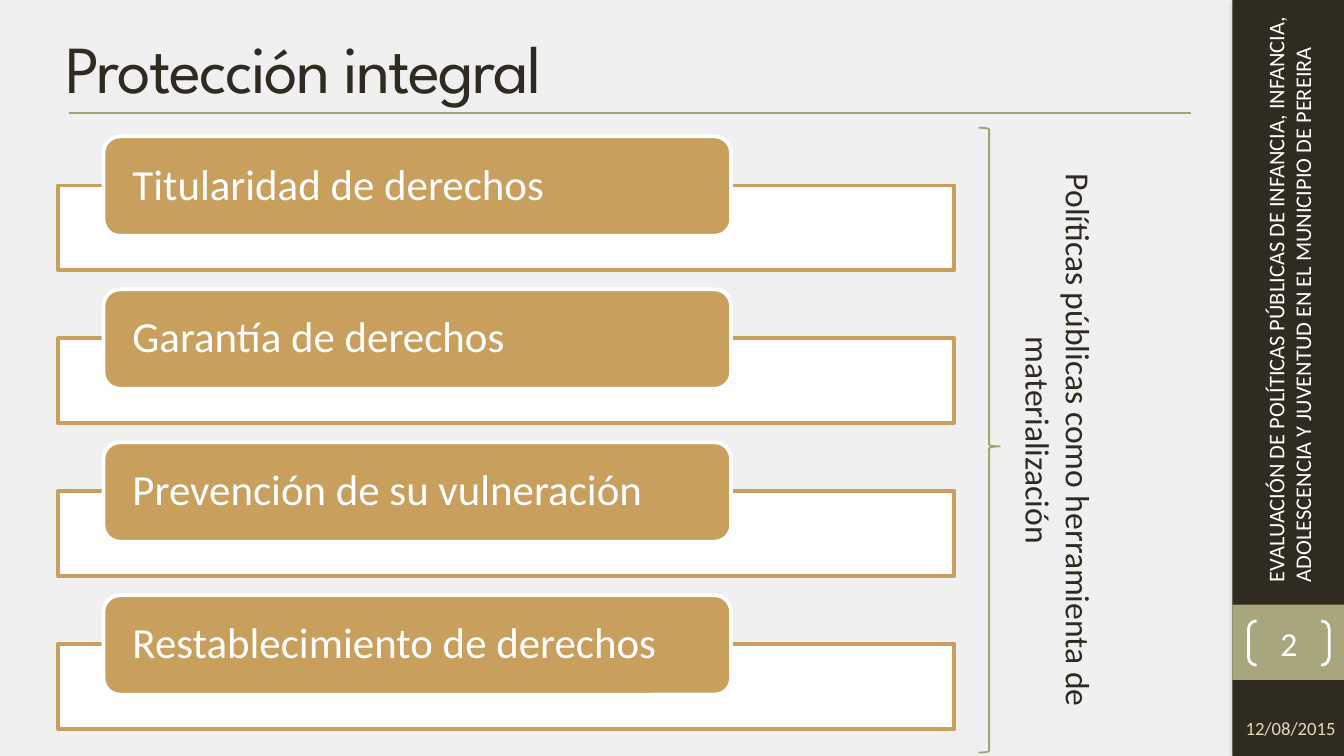
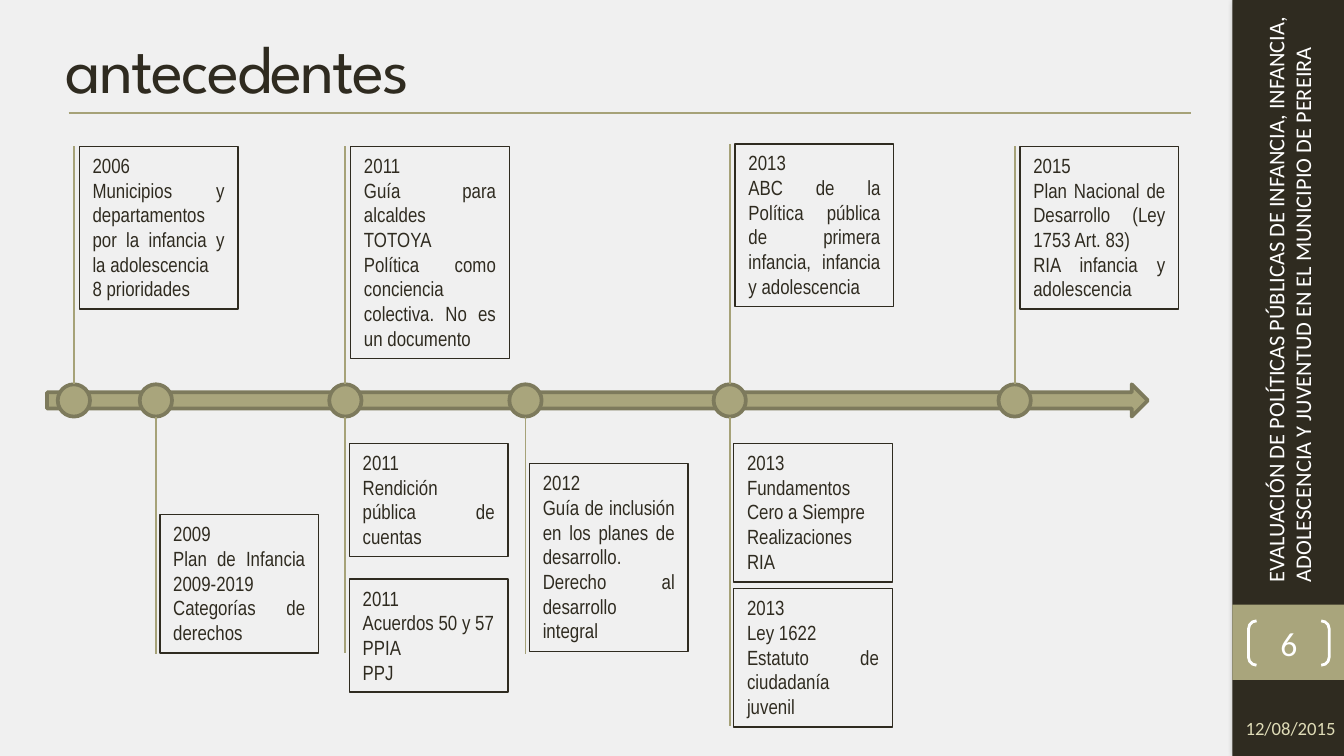
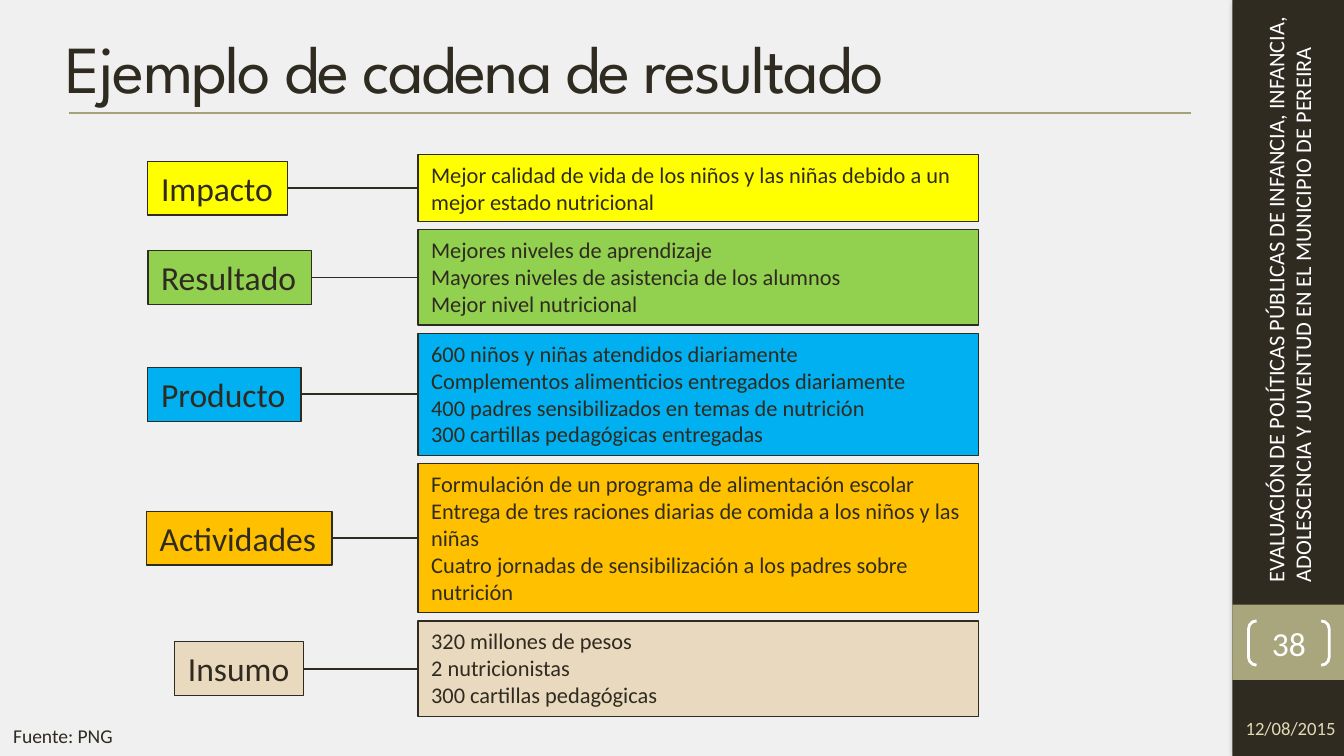
from lxml import etree
from pptx import Presentation
from pptx import util as u
from pptx.dml import color
from pptx.enum import shapes as s, text as t
from pptx.oxml import ns

WIDTH, HEIGHT = u.Inches(10), u.Inches(5.625)
COLUMNS = 100
CELL = WIDTH / COLUMNS

COLORS = {
    "background": "F0F0F0", "ink": "2F2B20", "sage": "A9A57C",
    "rule": "A6A278", "olive": "7D7A5C", "date": "DFDCB7",
    "white": "FFFFFF", "black": "000000", "ochre": "C89F5D",
    "yellow": "FFFF00", "green": "92D050", "blue": "00B0F0",
    "amber": "FFC000", "sand": "E9D9BE",
}
BODY, HEADING, NARROW = "Calibri", "League Spartan", "Arial Narrow"
PRESET = s.MSO_SHAPE
LEFT, CENTER, JUSTIFY = t.PP_ALIGN.LEFT, t.PP_ALIGN.CENTER, t.PP_ALIGN.JUSTIFY
TOP, MIDDLE = t.MSO_ANCHOR.TOP, t.MSO_ANCHOR.MIDDLE

BAND_TEXT = ("EVALUACIÓN DE POLÍTICAS PÚBLICAS DE INFANCIA, INFANCIA, "
             "ADOLESCENCIA Y JUVENTUD EN EL MUNICIPIO DE PEREIRA")
DATE = "12/08/2015"

RIGHTS = ["Titularidad de derechos", "Garantía de derechos",
          "Prevención de su vulneración", "Restablecimiento de derechos"]

MILESTONES = [
    (5.5, [(10.9, 12.1, ["2006", "Municipios y departamentos por la infancia y la adolescencia",
                         "8 prioridades"])], [], 0),
    (11.6, [], [(38.3, 10.3, ["2009", "Plan de Infancia 2009-2019",
                              "Categorías de derechos"])], 48.7),
    (25.7, [(10.9, 15.8, ["2011", "Guía para alcaldes", "TOTOYA",
                          "Política como conciencia colectiva. No es un documento"])],
     [(33, 8.4, ["2011", "Rendición pública de cuentas"]),
      (43.1, 8.4, ["2011", "Acuerdos 50 y 57", "PPIA", "PPJ"])], 48.6),
    (39.1, [], [(34.5, 14, ["2012", "Guía de inclusión en los planes de desarrollo.",
                            "Derecho al desarrollo integral"])], 48.7),
    (54.3, [(10.7, 12.1, ["2013", "ABC de la Política pública de primera infancia, "
                          "infancia y adolescencia"])],
     [(33, 10.3, ["2013", "Fundamentos Cero a Siempre", "Realizaciones", "RIA"]),
      (43.8, 10.3, ["2013", "Ley 1622", "Estatuto de ciudadanía juvenil"])], 54),
    (75.5, [(10.9, 12.1, ["2015", "Plan Nacional de Desarrollo (Ley 1753 Art. 83)",
                          "RIA infancia y adolescencia"])], [], 0),
]

CHAIN = [
    ("Impacto", 11, 10.4, "yellow", 5,
     ["Mejor calidad de vida de los niños y las niñas debido a un mejor estado nutricional"]),
    ("Resultado", 11, 12.2, "green", 7.1,
     ["Mejores niveles de aprendizaje", "Mayores niveles de asistencia de los alumnos",
      "Mejor nivel nutricional"]),
    ("Producto", 11, 11.4, "blue", 9.1,
     ["600 niños y niñas atendidos diariamente",
      "Complementos alimenticios entregados diariamente",
      "400 padres sensibilizados en temas de nutrición",
      "300 cartillas pedagógicas entregadas"]),
    ("Actividades", 10.9, 13.8, "amber", 11.1,
     ["Formulación de un programa de alimentación escolar",
      "Entrega de tres raciones diarias de comida a los niños y las niñas",
      "Cuatro jornadas de sensibilización a los padres sobre nutrición"]),
    ("Insumo", 13, 9.6, "sand", 7.1,
     ["320 millones de pesos", "2 nutricionistas", "300 cartillas pedagógicas"]),
]


def cells(*counts):
    return [u.Emu(round(count * CELL)) for count in counts]


def rgb(name):
    return color.RGBColor.from_string(COLORS[name])


def set_alpha(parent, percent):
    alpha = etree.SubElement(parent, ns.qn("a:alpha"))
    alpha.set("val", str(percent * 1000))


def add_box(slide, box, preset=PRESET.RECTANGLE, fill=None, line=None, weight=1, adjust=()):
    shape = slide.shapes.add_shape(preset, *cells(*box))
    shape.shadow.inherit = False
    if fill:
        shape.fill.solid()
        shape.fill.fore_color.rgb = rgb(fill)
    else:
        shape.fill.background()
    if line:
        shape.line.color.rgb = rgb(line)
        shape.line.width = u.Pt(weight)
    else:
        shape.line.fill.background()
    for index, value in enumerate(adjust):
        shape.adjustments[index] = value
    return shape


def write(shape, lines, size, font=BODY, ink="ink", align=LEFT, anchor=TOP,
          wrap=True, grow=False, insets=None, tracking=0, spacing=None):
    frame = shape.text_frame
    frame.word_wrap = wrap
    frame.vertical_anchor = anchor
    frame.auto_size = t.MSO_AUTO_SIZE.SHAPE_TO_FIT_TEXT if grow else t.MSO_AUTO_SIZE.NONE
    if insets:
        (frame.margin_left, frame.margin_top,
         frame.margin_right, frame.margin_bottom) = cells(*insets)
    for index, line in enumerate(lines):
        paragraph = frame.add_paragraph() if index else frame.paragraphs[0]
        paragraph.alignment = align
        if spacing:
            paragraph.line_spacing = spacing
        run = paragraph.add_run()
        run.text = line
        run.font.name = font
        run.font.size = u.Pt(size)
        run.font.color.rgb = rgb(ink)
        if tracking:
            run.font._element.set("spc", str(tracking * 100))
    return shape


def add_text(slide, box, line, size, **style):
    return write(slide.shapes.add_textbox(*cells(*box)), [line], size, **style)


def add_line(slide, start, end, ink="rule"):
    connector = slide.shapes.add_connector(s.MSO_CONNECTOR.STRAIGHT, *cells(*start, *end))
    connector.line.color.rgb = rgb(ink)
    connector.line.width = u.Pt(1)
    etree.SubElement(connector._element.spPr, ns.qn("a:effectLst"))


def add_band_shadow(band):
    effects = band._element.spPr.find(ns.qn("a:effectLst"))
    shadow = etree.SubElement(effects, ns.qn("a:outerShdw"), blurRad=str(u.Pt(4)),
                              dist=str(u.Pt(2)), dir="0", rotWithShape="0")
    shade = etree.SubElement(shadow, ns.qn("a:srgbClr"), val=COLORS["black"])
    set_alpha(shade, 60)


def add_base(presentation, title, number):
    slide = presentation.slides.add_slide(presentation.slide_layouts[6])
    slide.background.fill.solid()
    slide.background.fill.fore_color.rgb = rgb("background")
    add_band_shadow(add_box(slide, (91.7, 0, 8.3, 56.25), fill="ink"))
    add_box(slide, (91.7, 45, 8.3, 5.6), fill="sage")
    band_text = add_text(slide, (70.9, 16.8, 50, 5), BAND_TEXT, 12, ink="white", grow=True)
    band_text.rotation = 270
    add_line(slide, (5.1, 8.4), (88.6, 8.4))
    add_text(slide, (3.9, 1.4, 85.8, 7.1), title, 36, font=HEADING, anchor=MIDDLE, tracking=-1)
    add_text(slide, (91.7, 52.2, 10.3, 4), DATE, 10, ink="date", anchor=MIDDLE)
    bracket = add_box(slide, (92.9, 46.2, 6, 3.3), PRESET.DOUBLE_BRACKET,
                      line="white", weight=1.5, adjust=[0.18])
    write(bracket, [str(number)], 18, ink="white", align=CENTER, anchor=MIDDLE,
          insets=(0, 0, 0, 0))
    return slide


def add_right(slide, top, label):
    panel = add_box(slide, (4.3, top + 3.65, 66.7, 6.3), fill="white", line="ochre", weight=2)
    set_alpha(panel._element.spPr.find(ns.qn("a:solidFill"))[0], 90)
    pill = add_box(slide, (7.7, top, 46.7, 7.4), PRESET.ROUNDED_RECTANGLE,
                   fill="ochre", line="white", weight=2)
    write(pill, [label], 23, ink="white", anchor=MIDDLE, insets=(1.8, 0, 1.8, 0), spacing=0.9)


def add_card(slide, left, card):
    top, height, lines = card
    shape = add_box(slide, (left, top, 11.8, height), line="ink", weight=0.75)
    write(shape, lines, 11, font=NARROW, align=JUSTIFY, grow=True)


def add_milestone(slide, center, above, below, stem_end):
    axis, radius = 29.8, 1.2
    add_box(slide, (center - radius, axis - radius, 2 * radius, 2 * radius),
            PRESET.OVAL, fill="sage", line="olive", weight=2)
    if above:
        add_line(slide, (center, above[0][0]), (center, axis - radius))
    if below:
        add_line(slide, (center, axis + radius), (center, stem_end))
    for card in above:
        add_card(slide, center + 0.4, card)
    for card in below:
        add_card(slide, center + 0.3, card)


def add_link(slide, top, label, left, width, fill, height, lines):
    panel_left, label_height = 31.1, 4
    middle = top + height / 2
    tag = add_box(slide, (left, middle - label_height / 2, width, label_height),
                  fill=fill, line="ink", weight=0.75)
    write(tag, [label], 18, wrap=False, grow=True)
    panel = add_box(slide, (panel_left, top, 41.7, height), fill=fill, line="ink", weight=0.75)
    write(panel, lines, 12, grow=True)
    add_line(slide, (left + width, middle), (panel_left, middle), "ink")


def build_protection(presentation):
    slide = add_base(presentation, "Protección integral", 2)
    for row, label in enumerate(RIGHTS):
        add_right(slide, 10.15 + 11.38 * row, label)
    add_box(slide, (72.8, 9.5, 1.6, 46.5), PRESET.RIGHT_BRACE, line="rule", adjust=[0.08, 0.51])
    caption = add_text(slide, (55.5, 29.2, 46.5, 7.1),
                       "Políticas públicas como herramienta de materialización", 18,
                       align=CENTER, grow=True)
    caption.rotation = 90


def build_background(presentation):
    slide = add_base(presentation, "antecedentes", 6)
    add_box(slide, (3.5, 28.6, 81.9, 2.4), PRESET.RIGHT_ARROW,
            fill="sage", line="olive", weight=2)
    for milestone in MILESTONES:
        add_milestone(slide, *milestone)


def build_chain(presentation):
    slide = add_base(presentation, "Ejemplo de cadena de resultado", 38)
    top, gap = 11.5, 0.6
    for label, left, width, fill, height, lines in CHAIN:
        add_link(slide, top, label, left, width, fill, height, lines)
        top += height + gap
    add_text(slide, (0, 53.4, 9.6, 2.8), "Fuente: PNG", 10.5, wrap=False, grow=True)


def main():
    presentation = Presentation()
    presentation.slide_width, presentation.slide_height = WIDTH, HEIGHT
    build_protection(presentation)
    build_background(presentation)
    build_chain(presentation)
    presentation.save("out.pptx")


if __name__ == "__main__":
    main()
